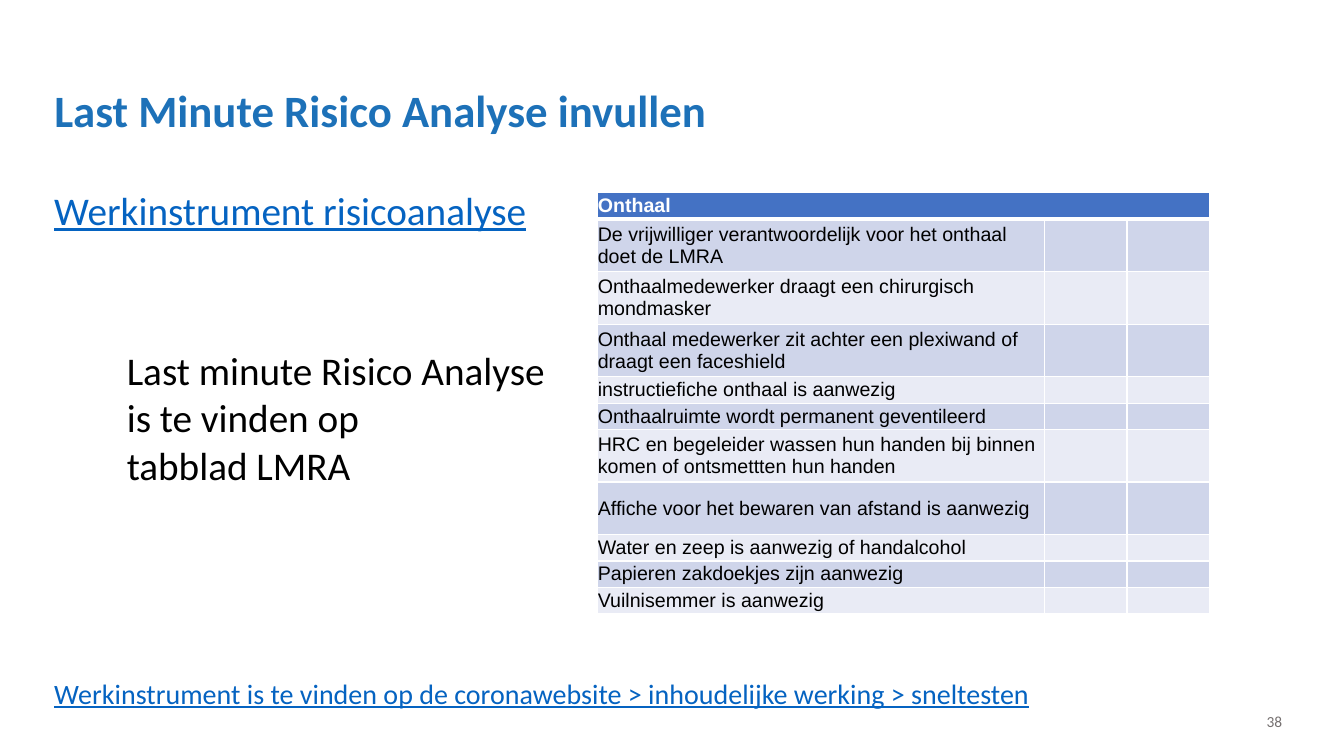
from lxml.etree import SubElement
from pptx import Presentation
from pptx.dml.color import RGBColor
from pptx.enum.text import MSO_ANCHOR, MSO_AUTO_SIZE, PP_ALIGN
from pptx.oxml import parse_xml
from pptx.oxml.ns import nsdecls, qn
from pptx.util import Pt

# Content: text, box (left, top, width, height in points), style name
TEXTS = [
    (["Last Minute Risico Analyse invullen"], (31.7, 28.8, 891.4, 104.4), "title"),
    (["38"], (707, 501.1, 216, 28.8), "number"),
    (["Werkinstrument risicoanalyse"], (31.7, 129.6, 384.5, 41), "link"),
    (["Werkinstrument is te vinden op de coronawebsite > inhoudelijke werking > sneltesten"],
     (31.7, 479.5, 748.8, 31.7), "small_link"),
    (["Last minute Risico Analyse", "is te vinden op\vtabblad LMRA"],
     (83.5, 244.1, 328.3, 108.7), "body"),
]
TABLE_HEADER = "Onthaal"
# Row label and height in lines
CHECKS = [
    ("De vrijwilliger verantwoordelijk voor het onthaal doet de LMRA", 2),
    ("Onthaalmedewerker draagt een chirurgisch mondmasker", 2),
    ("Onthaal medewerker zit achter een plexiwand of draagt een faceshield", 2),
    ("instructiefiche onthaal is aanwezig", 1),
    ("Onthaalruimte wordt permanent geventileerd", 1),
    ("HRC en begeleider wassen hun handen bij binnen komen of ontsmettten hun handen", 2),
    ("Affiche voor het bewaren van afstand is aanwezig", 2),
    ("Water en zeep is aanwezig of handalcohol", 1),
    ("Papieren zakdoekjes zijn aanwezig", 1),
    ("Vuilnisemmer is aanwezig", 1),
]
TABLE_LEFT, TABLE_TOP, ROW_LINE = 427, 137.6, 18.8
COLUMN_WIDTHS = [319, 59, 59]

THEME = {
    "text_font": "Calibri", "table_font": "Arial", "table_size": 14,
    "header_fill": "4472C4", "bands": ["CFD5EA", "E9EBF5"],
    "header_text": "FFFFFF", "table_text": "000000", "border": "FFFFFF",
    # size, colour, bold, underline
    "title": (32, "1D71B8", True, False),
    "number": (11, "757070", False, False),
    "link": (28, "0563C1", False, True),
    "small_link": (20, "0563C1", False, True),
    "body": (28, "000000", False, False),
}


def format_font(font, name, size, colour, bold=False, underline=False):
    font.name, font.size, font.bold, font.underline = name, Pt(size), bold, underline
    font.color.rgb = RGBColor.from_string(colour)


def add_text(page, lines, place, style):
    box = page.shapes.add_textbox(*map(Pt, place))
    frame = box.text_frame
    frame.word_wrap = True
    frame.text = "\n".join(lines)
    if style in ("title", "number"):
        frame.auto_size = MSO_AUTO_SIZE.NONE
        frame.vertical_anchor = MSO_ANCHOR.MIDDLE
    else:
        frame.auto_size = MSO_AUTO_SIZE.SHAPE_TO_FIT_TEXT
    for para in frame.paragraphs:
        if style == "title":
            para.line_spacing = 0.9
        elif style == "number":
            para.alignment = PP_ALIGN.RIGHT
        for span in para.runs:
            format_font(span.font, THEME["text_font"], *THEME[style])


def add_borders(cell, widths):
    for index, (side, width) in enumerate(widths.items()):
        line = parse_xml(
            f'<a:ln{side} {nsdecls("a")} w="{Pt(width)}"><a:solidFill>'
            f'<a:srgbClr val="{THEME["border"]}"/></a:solidFill></a:ln{side}>')
        cell._tc.get_or_add_tcPr().insert(index, line)


def format_cell(cell, text, fill, colour, bold, borders):
    cell.margin_left = cell.margin_right = cell.margin_top = cell.margin_bottom = 0
    cell.vertical_anchor = MSO_ANCHOR.MIDDLE
    cell.fill.solid()
    cell.fill.fore_color.rgb = RGBColor.from_string(fill)
    add_borders(cell, borders)
    cell.text_frame.text = text
    para = cell.text_frame.paragraphs[0]
    for span in para.runs:
        format_font(span.font, THEME["table_font"], THEME["table_size"], colour, bold)
    if not text:  # keeps empty cells from stretching their row
        SubElement(para._p, qn("a:endParaRPr"), sz=str(THEME["table_size"] * 100))


def add_checklist(page):
    rows = [(TABLE_HEADER, 1)] + CHECKS
    height = ROW_LINE * sum(lines for _, lines in rows)
    table = page.shapes.add_table(
        len(rows), len(COLUMN_WIDTHS), Pt(TABLE_LEFT), Pt(TABLE_TOP),
        Pt(sum(COLUMN_WIDTHS)), Pt(height)).table
    for column, width in zip(table.columns, COLUMN_WIDTHS):
        column.width = Pt(width)
    for index, (label, lines) in enumerate(rows):
        table.rows[index].height = Pt(ROW_LINE * lines)
        header = index == 0
        fill = THEME["header_fill"] if header else THEME["bands"][(index - 1) % 2]
        colour = THEME["header_text"] if header else THEME["table_text"]
        borders = {"L": 1, "R": 1, "T": 3 if index == 1 else 1, "B": 3 if header else 1}
        for number in range(len(COLUMN_WIDTHS)):
            text = label if number == 0 else ""
            format_cell(table.cell(index, number), text, fill, colour, header, borders)
    table.cell(0, 0).merge(table.cell(0, len(COLUMN_WIDTHS) - 1))


def main():
    deck = Presentation()
    deck.slide_width, deck.slide_height = Pt(960), Pt(540)
    page = deck.slides.add_slide(deck.slide_layouts[6])
    # Title, links, explanation and page number
    for lines, place, style in TEXTS:
        add_text(page, lines, place, style)
    # Reception checklist
    add_checklist(page)
    deck.save("out.pptx")


if __name__ == "__main__":
    main()
